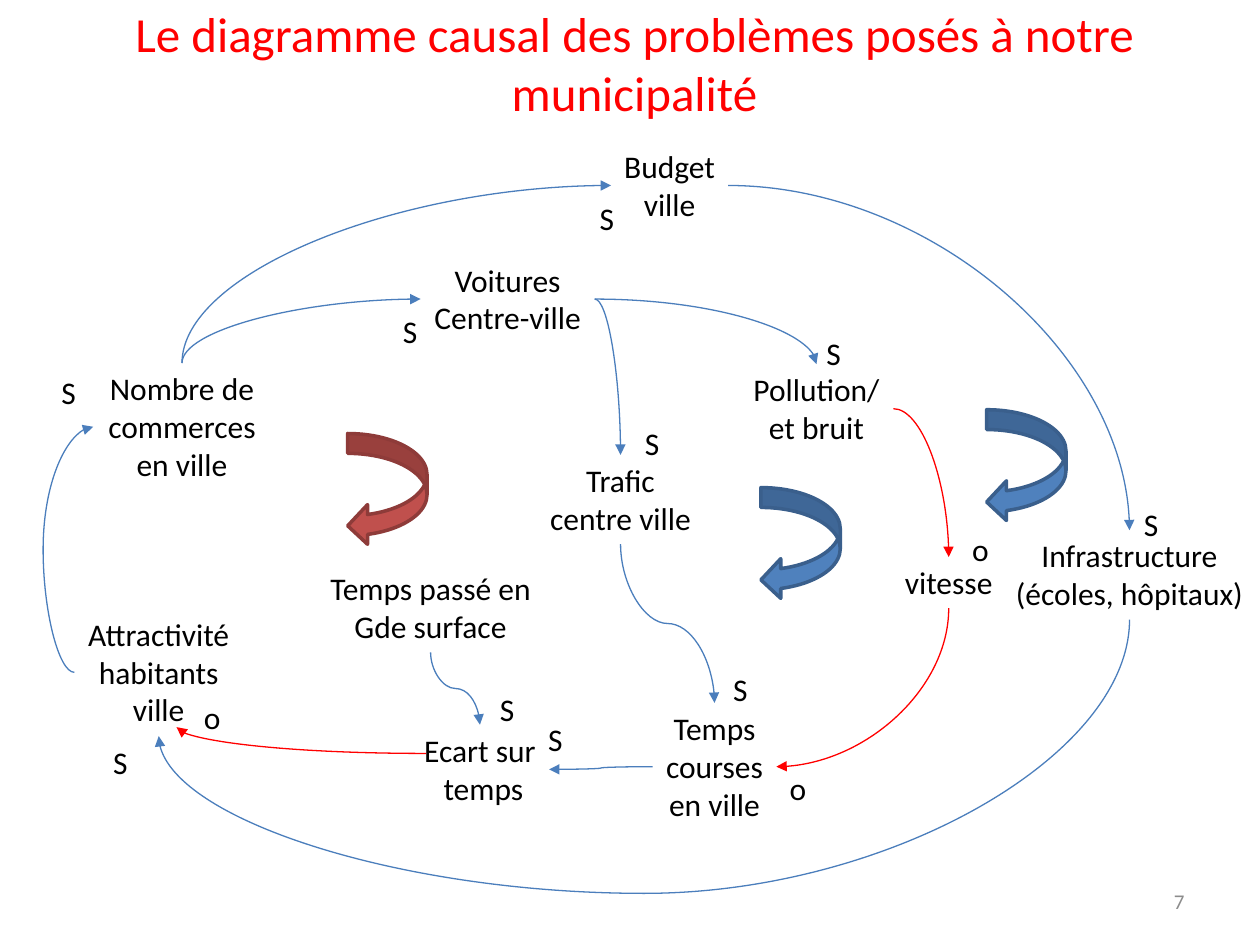
from lxml.etree import SubElement
from pptx import Presentation
from pptx.dml.color import RGBColor
from pptx.enum.shapes import MSO_CONNECTOR as Connector, MSO_SHAPE as Shape
from pptx.enum.text import MSO_ANCHOR as Anchor, PP_ALIGN as Align
from pptx.oxml.ns import qn
from pptx.util import Cm, Pt

BLACK = RGBColor(0x00, 0x00, 0x00)
RED = RGBColor(0xFF, 0x00, 0x00)
GREY = RGBColor(0x8C, 0x8C, 0x8C)
LINK_BLUE = RGBColor(0x4B, 0x7E, 0xBC)
LOOP_BLUE = RGBColor(0x4F, 0x81, 0xBD)
LOOP_BLUE_EDGE = RGBColor(0x3A, 0x5F, 0x8C)
LOOP_RED = RGBColor(0xC0, 0x50, 0x4D)
LOOP_RED_EDGE = RGBColor(0x8E, 0x3B, 0x39)

LINE_HEIGHT = 0.77
TEXT_MARGINS = 0.26

# Variables of the diagram: wording, left, top, width (cm)
VARIABLES = {
    "voitures": ("Voitures\nCentre-ville", 8.48, 5.13, 3.51),
    "pollution": ("Pollution/\net bruit", 14.91, 7.34, 3.1),
    "vitesse": ("vitesse", 17.98, 11.23, 2.29),
    "courses": ("Temps\ncourses\nen ville", 13.16, 14.17, 2.49),
    "attractivité": ("Attractivité\nhabitants\nville", 1.5, 12.27, 3.4),
    "grande surface": ("Temps passé en\nGde surface", 6.38, 11.35, 4.6),
    "commerces": ("Nombre de\ncommerces\nen ville", 1.88, 7.32, 3.58),
    "budget": ("Budget\nville", 12.32, 2.84, 2.36),
    "infrastructure": ("Infrastructure\n(écoles, hôpitaux)", 20.19, 10.69, 5.16),
    "écart": ("Ecart sur\n temps", 8.28, 14.61, 2.79),
    "trafic": ("Trafic\ncentre ville", 10.82, 9.17, 3.38),
}

# Cause, side it leaves, effect, side it reaches, colour, position of the bend
LINKS = [
    ("voitures", "right", "pollution", "top", LINK_BLUE, None),
    ("voitures", "right", "trafic", "top", LINK_BLUE, None),
    ("pollution", "right", "vitesse", "top", RED, None),
    ("vitesse", "bottom", "courses", "right", RED, None),
    ("trafic", "bottom", "courses", "top", LINK_BLUE, None),
    ("courses", "left", "écart", "right", LINK_BLUE, None),
    ("grande surface", "bottom", "écart", "top", LINK_BLUE, None),
    ("attractivité", "left", "commerces", "left", LINK_BLUE, 0.87),
    ("commerces", "top", "voitures", "left", LINK_BLUE, None),
    ("commerces", "top", "budget", "left", LINK_BLUE, None),
    ("budget", "right", "infrastructure", "top", LINK_BLUE, None),
    ("infrastructure", "bottom", "attractivité", "bottom", LINK_BLUE, 18.01),
]

POLARITIES = {
    "S": [(11.84, 3.89), (22.81, 10.06), (7.87, 6.17), (16.41, 6.6), (14.53, 13.39),
          (0.99, 7.39), (2.03, 14.86), (10.8, 14.4), (9.83, 13.79), (12.75, 8.43)],
    "o": [(19.35, 10.57), (15.67, 15.37), (3.86, 13.94)],
}
POLARITY_WIDTHS = {"S": 0.81, "o": 0.86}

LOOPS = [
    (7.01, 8.74, LOOP_RED, LOOP_RED_EDGE),
    (15.34, 9.83, LOOP_BLUE, LOOP_BLUE_EDGE),
    (19.89, 8.26, LOOP_BLUE, LOOP_BLUE_EDGE),
]


def write_text(frame, text, size=18, color=BLACK, align=Align.CENTER,
               anchor=Anchor.TOP, wrap=False):
    frame.text = text
    frame.word_wrap = wrap
    frame.vertical_anchor = anchor
    for paragraph in frame.paragraphs:
        paragraph.alignment = align
        font = paragraph.runs[0].font
        font.name = "Calibri"
        font.size = Pt(size)
        font.color.rgb = color


def text_height(text):
    return TEXT_MARGINS + LINE_HEIGHT * len(text.split("\n"))


def add_label(slide, text, left, top, width, **text_format):
    label = slide.shapes.add_textbox(Cm(left), Cm(top), Cm(width), Cm(text_height(text)))
    write_text(label.text_frame, text, **text_format)


def side_point(name, side):
    """Return the middle of one side of a variable, in cm."""
    text, left, top, width = VARIABLES[name]
    height = text_height(text)
    return {
        "left": (left, top + height / 2),
        "right": (left + width, top + height / 2),
        "top": (left + width / 2, top),
        "bottom": (left + width / 2, top + height),
    }[side]


def add_curve(slide, start, end, color, upright=False, single=True, bend=None):
    """Draw a curved arrow; upright ones leave vertically, single ones turn once."""
    (x1, y1), (x2, y2) = start, end
    ratio = None
    if bend is not None:
        ratio = (bend - y1) / (y2 - y1) if upright else (bend - x1) / (x2 - x1)
    if upright:
        # Lay the curve on its side about its centre, then turn it a quarter
        mid_x, mid_y = (x1 + x2) / 2, (y1 + y2) / 2
        half_x, half_y = (y2 - y1) / 2, (x1 - x2) / 2
        x1, y1, x2, y2 = mid_x - half_x, mid_y - half_y, mid_x + half_x, mid_y + half_y
    curve = slide.shapes.add_connector(Connector.CURVE, Cm(x1), Cm(y1), Cm(x2), Cm(y2))
    curve.line.color.rgb = color
    curve.line.width = Pt(0.75)
    properties = curve._element.spPr
    if upright:
        properties.find(qn("a:xfrm")).set("rot", "5400000")
    geometry = properties.find(qn("a:prstGeom"))
    if single:
        geometry.set("prst", "curvedConnector2")
    if ratio is not None:
        SubElement(geometry.find(qn("a:avLst")), qn("a:gd"),
                   name="adj1", fmla=f"val {round(ratio * 100000)}")
    SubElement(properties.find(qn("a:ln")), qn("a:tailEnd"), type="triangle")
    SubElement(properties, qn("a:effectLst"))


def add_link(slide, cause, cause_side, effect, effect_side, color, bend):
    vertical = ("top", "bottom")
    upright = cause_side in vertical
    add_curve(slide, side_point(cause, cause_side), side_point(effect, effect_side), color,
              upright=upright, single=upright != (effect_side in vertical), bend=bend)


def add_loop(slide, left, top, fill, edge):
    loop = slide.shapes.add_shape(Shape.CURVED_LEFT_ARROW, Cm(left), Cm(top), Cm(1.6), Cm(2.26))
    loop.shadow.inherit = False
    loop.fill.solid()
    loop.fill.fore_color.rgb = fill
    loop.line.color.rgb = edge
    loop.line.width = Pt(2)


def add_title(slide, text):
    title = slide.shapes.title
    title.left, title.top, title.width, title.height = Cm(0.89), Cm(0), Cm(23.8), Cm(2.51)
    write_text(title.text_frame, text, size=28, color=RED, anchor=Anchor.MIDDLE, wrap=True)


def main():
    deck = Presentation()
    deck.slide_width, deck.slide_height = Cm(25.4), Cm(19.05)
    slide = deck.slides.add_slide(deck.slide_layouts[5])
    add_title(slide, "Le diagramme causal des problèmes posés à notre municipalité")
    for variable in VARIABLES.values():
        add_label(slide, *variable)
    for link in LINKS:
        add_link(slide, *link)
    add_curve(slide, (8.59, 15.19), (3.56, 14.66), RED)
    for loop in LOOPS:
        add_loop(slide, *loop)
    for sign, places in POLARITIES.items():
        for left, top in places:
            add_label(slide, sign, left, top, POLARITY_WIDTHS[sign], align=Align.LEFT)
    add_label(slide, "7", 18.21, 17.65, 5.92, size=12, color=GREY,
              align=Align.RIGHT, anchor=Anchor.MIDDLE, wrap=True)
    deck.save("out.pptx")


if __name__ == "__main__":
    main()
